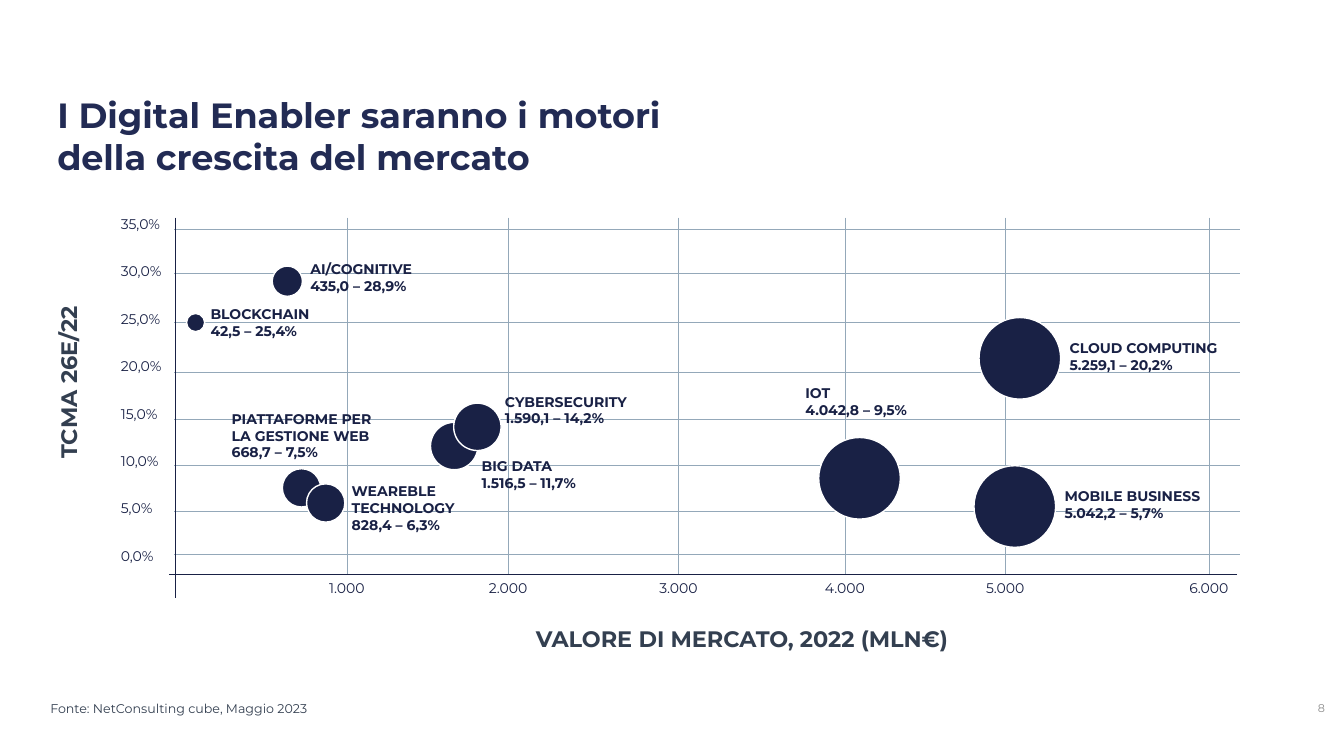
from pptx import Presentation
from pptx.dml.color import RGBColor
from pptx.enum.dml import MSO_LINE
from pptx.enum.shapes import MSO_CONNECTOR, MSO_SHAPE
from pptx.enum.text import MSO_ANCHOR, MSO_AUTO_SIZE, PP_ALIGN
from pptx.oxml.ns import qn
from pptx.util import Inches, Pt
from lxml.etree import SubElement

NAVY, TITLE_BLUE, SLATE = "192145", "222B54", "333F50"
GRID, WHITE, GREY = "94A8B9", "FFFFFF", "8C8C8C"


def color(value):
    return RGBColor.from_string(value)


class SlideBuilder:
    font = "Montserrat"

    def __init__(self, slide):
        self.slide = slide

    def text(self, box, paragraphs, size, ink=NAVY, bold=False,
             align=PP_ALIGN.LEFT, anchor=MSO_ANCHOR.TOP, rotation=0):
        shape = self.slide.shapes.add_textbox(*map(Inches, box))
        shape.rotation = rotation
        frame = shape.text_frame
        frame.word_wrap = True
        frame.auto_size = MSO_AUTO_SIZE.NONE
        frame.vertical_anchor = anchor
        for index, content in enumerate(paragraphs):
            paragraph = frame.add_paragraph() if index else frame.paragraphs[0]
            paragraph.alignment = align
            for number, line in enumerate(content.split("\n")):
                if number:
                    paragraph.add_line_break()
                run = paragraph.add_run()
                run.text = line
                run.font.name = self.font
                run.font.size = Pt(size)
                run.font.bold = bold
                run.font.color.rgb = color(ink)

    def line(self, x1, y1, x2, y2, ink=NAVY, width=0.5, dotted=False):
        connector = self.slide.shapes.add_connector(
            MSO_CONNECTOR.STRAIGHT, *map(Inches, (x1, y1, x2, y2)))
        connector.line.color.rgb = color(ink)
        connector.line.width = Pt(width)
        if dotted:
            connector.line.dash_style = MSO_LINE.ROUND_DOT
        SubElement(connector._element.spPr, qn("a:effectLst"))

    def grid_line(self, x1, y1, x2, y2):
        self.line(x1, y1, x2, y2, GRID, 0.25, dotted=True)

    def bubble(self, left, top, diameter):
        shape = self.slide.shapes.add_shape(
            MSO_SHAPE.OVAL, *map(Inches, (left, top, diameter, diameter)))
        shape.shadow.inherit = False
        shape.fill.solid()
        shape.fill.fore_color.rgb = color(NAVY)
        shape.line.color.rgb = color(WHITE)
        shape.line.width = Pt(1)


def main():
    presentation = Presentation()
    presentation.slide_width = Inches(13.33)
    presentation.slide_height = Inches(7.5)
    builder = SlideBuilder(presentation.slides.add_slide(presentation.slide_layouts[6]))

    # Title and source
    builder.text((0.47, 0.88, 10.97, 0.94),
                 ["I Digital Enabler saranno i motori \ndella crescita del mercato"],
                 25, TITLE_BLUE, bold=True)
    builder.text((0.4, 6.9, 4.61, 0.25), ["Fonte: NetConsulting cube, Maggio 2023"], 9, SLATE)

    # Horizontal grid and growth scale, from 0% upwards
    for y in (5.5, 5.07, 4.62, 4.16, 3.69, 3.2, 2.71, 2.27):
        builder.grid_line(12.29, y, 1.73, y)
    for step in range(8):
        builder.text((1.1, 5.38 - 0.47 * step, 0.78, 0.27), [f"{5 * step},0%"], 10)

    # Vertical grid and market value scale
    for thousands, x in enumerate((3.44, 5.04, 6.73, 8.38, 9.97, 11.99), start=1):
        builder.grid_line(x, 2.16, x, 5.7)
        builder.text((x - 0.4, 5.7, 0.8, 0.27), [f"{thousands}.000"], 10,
                     align=PP_ALIGN.CENTER)

    # Axes and their titles
    builder.line(1.74, 2.16, 1.74, 5.93)
    builder.line(12.27, 5.7, 1.68, 5.7)
    builder.text((-0.83, 3.61, 3.02, 0.37), ["TCMA 26E/22"], 16, SLATE, bold=True,
                 align=PP_ALIGN.CENTER, rotation=270)
    builder.text((4.34, 6.15, 6.04, 0.37), ["VALORE DI MERCATO, 2022 (MLN€)"], 16, SLATE,
                 bold=True, align=PP_ALIGN.CENTER)

    # Bubbles (left, top, diameter) with labels (left, top, width, height)
    enablers = [
        ((1.85, 3.11, 0.18), (1.99, 2.98, 1.27, 0.44), "BLOCKCHAIN", "42,5 – 25,4%"),
        ((2.7, 2.64, 0.3), (2.98, 2.54, 1.27, 0.44), "AI/COGNITIVE", "435,0 – 28,9%"),
        ((2.8, 4.65, 0.38), (2.2, 4.02, 1.77, 0.61),
         "PIATTAFORME PER LA GESTIONE WEB", "668,7 – 7,5%"),
        ((3.04, 4.8, 0.38), (3.39, 4.74, 1.32, 0.61), "WEAREBLE TECHNOLOGY", "828,4 – 6,3%"),
        ((4.27, 4.19, 0.47), (4.68, 4.49, 1.17, 0.44), "BIG DATA", "1.516,5 – 11,7%"),
        ((4.5, 4, 0.47), (4.91, 3.85, 1.54, 0.44), "CYBERSECURITY", "1.590,1 – 14,2%"),
        ((8.12, 4.34, 0.81), (7.89, 3.77, 1.9, 0.44), "IOT", "4.042,8 – 9,5%"),
        ((9.66, 4.62, 0.81), (10.46, 4.79, 1.9, 0.44), "MOBILE BUSINESS", "5.042,2 – 5,7%"),
        ((9.71, 3.15, 0.81), (10.51, 3.32, 1.9, 0.44), "CLOUD COMPUTING", "5.259,1 – 20,2%"),
    ]
    for circle, label_box, name, values in enablers:
        builder.bubble(*circle)
        builder.text(label_box, [name, values], 10, bold=True)

    # Slide number
    builder.text((12.51, 6.82, 0.73, 0.4), ["8"], 8, GREY,
                 align=PP_ALIGN.RIGHT, anchor=MSO_ANCHOR.MIDDLE)

    presentation.save("out.pptx")


if __name__ == "__main__":
    main()
